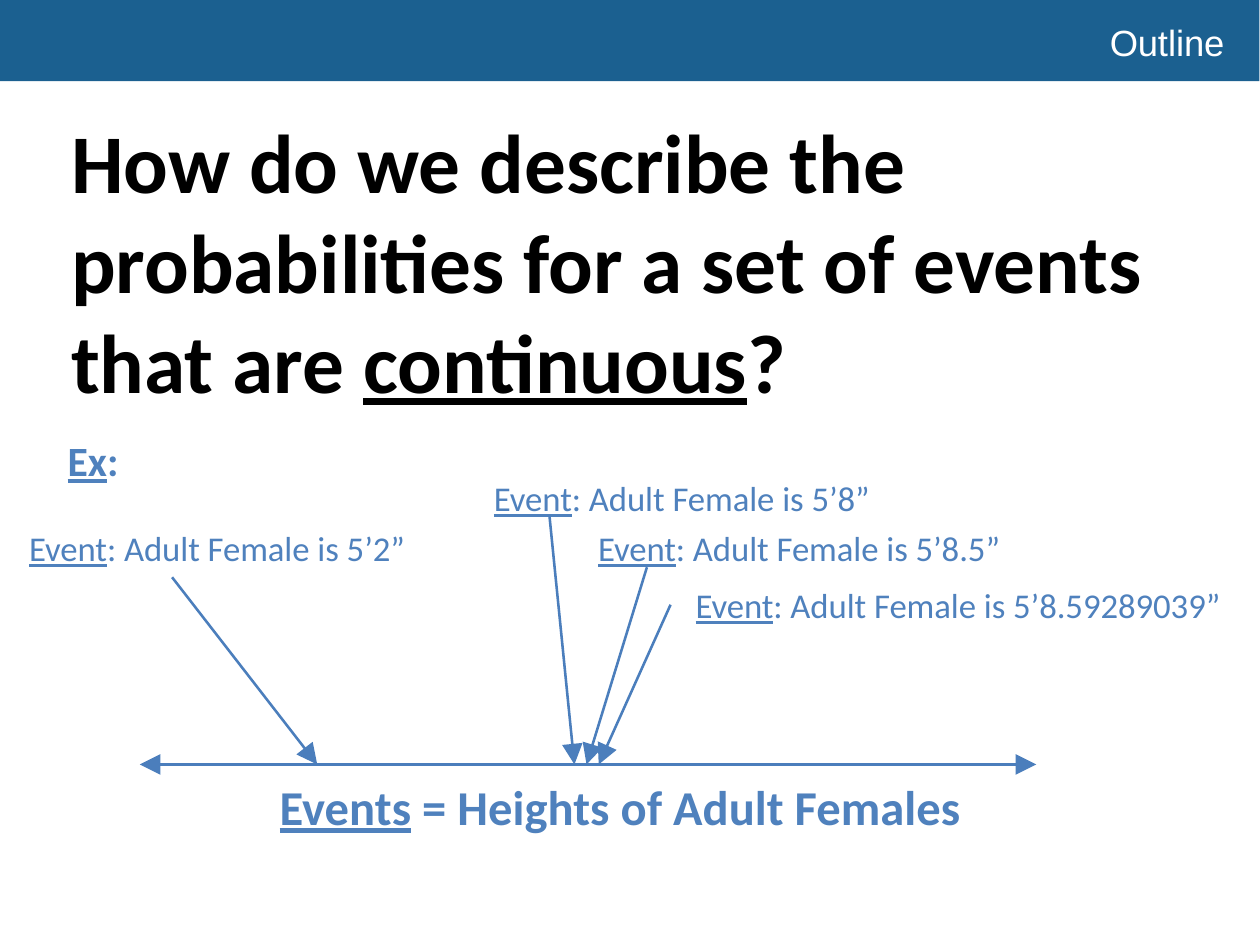
from dataclasses import dataclass

import pptx
import pptx.dml.color
import pptx.enum.shapes
import pptx.enum.text
import pptx.oxml
import pptx.oxml.ns
import pptx.util

Pt = pptx.util.Pt
BLUE = "4F81BD"
LINE_BLUE = "4B7EBC"
AXIS_Y = 220.2


@dataclass
class Caption:
    left: float
    top: float
    width: float
    height: float
    size: float
    bold: bool
    color: str
    before: str
    underlined: str
    after: str


@dataclass
class Event:
    height: str
    left: float
    top: float
    width: float
    arrow_x: float
    arrow_y: float
    axis_x: float


CAPTIONS = [
    Caption(13.4, 28.1, 329.8, 152.6, 24, True, "000000",
            "How do we describe the probabilities for a set of events that are ",
            "continuous", "?"),
    Caption(73.5, 220.3, 218.9, 24.5, 14, True, BLUE,
            "", "Events", " = Heights of Adult Females"),
    Caption(12.4, 121.7, 162, 21.6, 12, True, BLUE, "", "Ex", ":"),
]

EVENTS = [
    Event("5’2”", 1.3, 148.3, 162, 49.6, 166.3, 91.4),
    Event("5’8”", 135.2, 133.9, 162, 158.3, 148.5, 165.5),
    Event("5’8.5”", 165.2, 148.3, 162, 186.4, 163.4, 169),
    Event("5’8.59289039”", 193.3, 164.7, 173.5, 193.2, 174.2, 172.5),
]


def rgb(value: str) -> pptx.dml.color.RGBColor:
    return pptx.dml.color.RGBColor.from_string(value)


def apply(target, values: dict) -> None:
    for name, value in values.items():
        setattr(target, name, value)


def add_run(paragraph, text: str, color: str, values: dict) -> None:
    run = paragraph.add_run()
    run.text = text
    apply(run.font, values)
    run.font.color.rgb = rgb(color)


def add_caption(slide, caption: Caption) -> None:
    box = slide.shapes.add_textbox(Pt(caption.left), Pt(caption.top),
                                   Pt(caption.width), Pt(caption.height))
    box.text_frame.word_wrap = True
    paragraph = box.text_frame.paragraphs[0]
    parts = [(caption.before, False), (caption.underlined, True), (caption.after, False)]
    for text, underline in parts:
        if text:
            add_run(paragraph, text, caption.color,
                    {"name": "Calibri", "size": Pt(caption.size),
                     "bold": caption.bold, "underline": underline})


def add_arrow(slide, start: tuple[float, float], end: tuple[float, float],
              ends: tuple[str, ...] = ("tailEnd",)) -> None:
    arrow = slide.shapes.add_connector(
        pptx.enum.shapes.MSO_CONNECTOR.STRAIGHT, *map(Pt, start + end))
    arrow.line.width = Pt(0.75)
    arrow.line.color.rgb = rgb(LINE_BLUE)
    properties = arrow.element.spPr
    outline = properties.find(pptx.oxml.ns.qn("a:ln"))
    for tag in ends:
        outline.append(pptx.oxml.parse_xml(
            f'<a:{tag} {pptx.oxml.ns.nsdecls("a")} type="triangle"/>'))
    properties.append(
        pptx.oxml.parse_xml(f'<a:effectLst {pptx.oxml.ns.nsdecls("a")}/>'))


def add_event(slide, event: Event) -> None:
    add_caption(slide, Caption(event.left, event.top, event.width, 19.4, 10, False, BLUE,
                               "", "Event", f": Adult Female is {event.height}"))
    add_arrow(slide, (event.arrow_x, event.arrow_y), (event.axis_x, AXIS_Y))


def add_header(slide) -> None:
    banner = slide.shapes.add_shape(
        pptx.enum.shapes.MSO_SHAPE.RECTANGLE, 0, 0, Pt(362.85), Pt(23.4))
    banner.shadow.inherit = False
    banner.fill.solid()
    banner.fill.fore_color.rgb = rgb("1B6090")
    banner.line.fill.background()

    outline = slide.shapes.title
    outline.element.addprevious(banner.element)
    apply(outline, {"left": Pt(7.9), "top": Pt(4.3),
                    "width": Pt(347.8), "height": Pt(15.1)})
    apply(outline.text_frame, {
        "margin_left": Pt(311.8), "margin_top": Pt(1.4),
        "margin_right": 0, "margin_bottom": 0, "word_wrap": True,
        "auto_size": pptx.enum.text.MSO_AUTO_SIZE.NONE,
        "vertical_anchor": pptx.enum.text.MSO_ANCHOR.TOP,
    })
    paragraph = outline.text_frame.paragraphs[0]
    apply(paragraph, {"alignment": pptx.enum.text.PP_ALIGN.LEFT, "space_before": Pt(1.4)})
    add_run(paragraph, "Outline", "FFFFFF", {"name": "Arial", "size": Pt(10.5)})


def main() -> None:
    deck = pptx.Presentation()
    apply(deck, {"slide_width": Pt(363), "slide_height": Pt(272.5)})
    slide = deck.slides.add_slide(deck.slide_layouts.get_by_name("Title Only"))
    add_header(slide)
    for caption in CAPTIONS:
        add_caption(slide, caption)
    add_arrow(slide, (40.3, AXIS_Y), (298.6, AXIS_Y), ("headEnd", "tailEnd"))
    for event in EVENTS:
        add_event(slide, event)
    deck.save("out.pptx")


if __name__ == "__main__":
    main()
